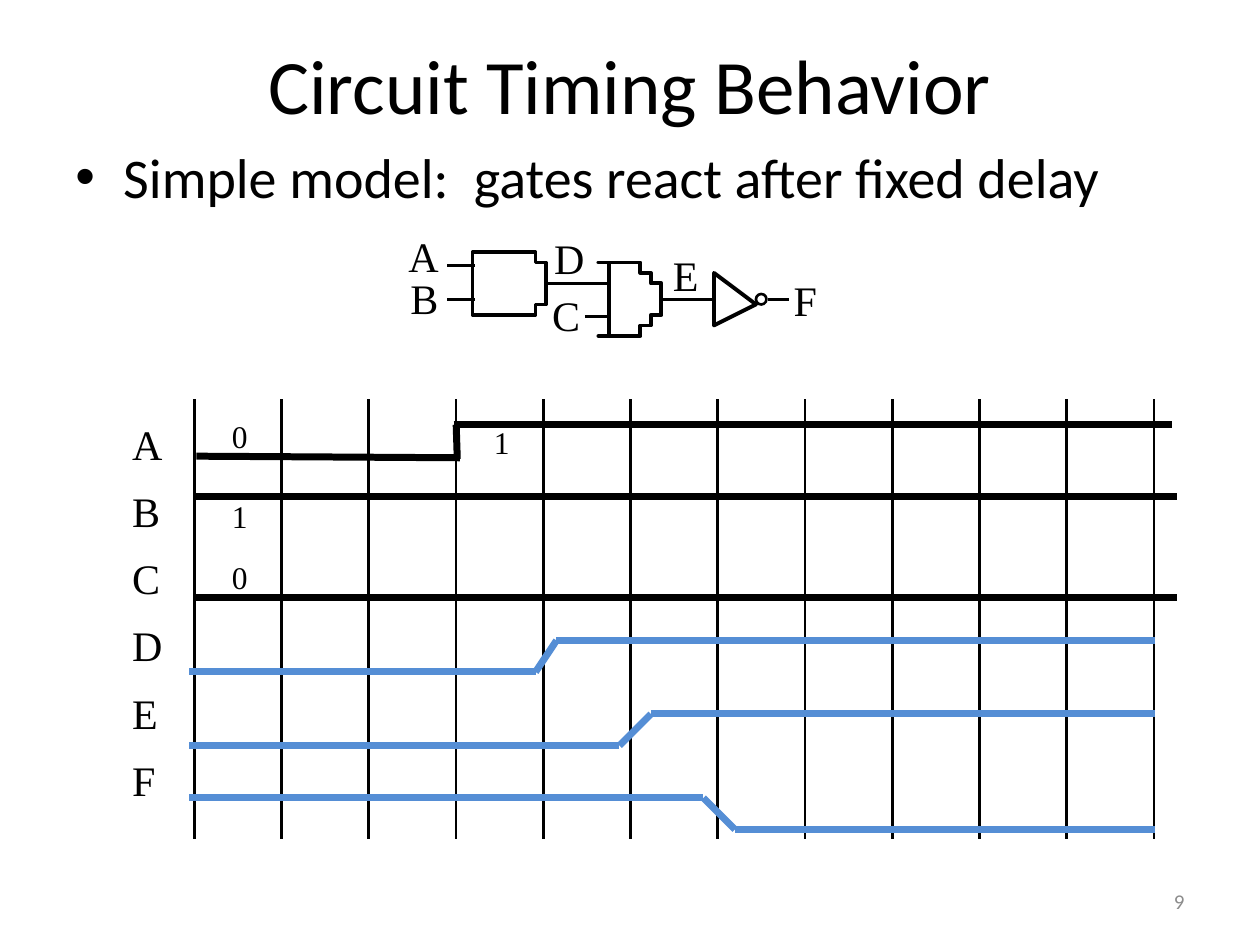
"""Build a slide that shows a small logic circuit and its timing diagram."""
from dataclasses import dataclass
from itertools import pairwise
from math import cos, pi, sin

from lxml import etree
from pptx import Presentation
from pptx.dml.color import RGBColor
from pptx.enum.shapes import MSO_CONNECTOR, MSO_SHAPE
from pptx.enum.text import MSO_ANCHOR, PP_ALIGN
from pptx.oxml.ns import qn
from pptx.util import Inches, Pt

COLORS = {"ink": "000000", "wave": "558ED5", "number": "8C8C8C"}
SANS, SERIF = "Calibri", "Times New Roman"
STRAIGHT, ELLIPSE = MSO_CONNECTOR.STRAIGHT, MSO_SHAPE.OVAL
LEFT, CENTER, RIGHT = PP_ALIGN.LEFT, PP_ALIGN.CENTER, PP_ALIGN.RIGHT
TOP, MIDDLE, BOTTOM = MSO_ANCHOR.TOP, MSO_ANCHOR.MIDDLE, MSO_ANCHOR.BOTTOM
COLUMNS, ROWS = 120, 90
CELL = Inches(10) // COLUMNS
Point = tuple[float, float]


@dataclass
class Label:
    text: str
    left: float
    top: float
    width: float
    height: float
    size: float = 24
    font: str = SERIF
    color: str = "ink"
    align: PP_ALIGN = LEFT
    anchor: MSO_ANCHOR = TOP
    wrap: bool = False
    spacing: float = 0


@dataclass
class Stroke:
    points: list[Point]
    color: str = "ink"
    weight: float = 4


def grid(value: float) -> int:
    return round(value * CELL)


def paint_line(line, color: str, weight: float) -> None:
    line.color.rgb = RGBColor.from_string(COLORS[color])
    line.width = Pt(weight)


def draw_label(page, label: Label):
    box = page.shapes.add_textbox(
        *map(grid, (label.left, label.top, label.width, label.height)))
    frame = box.text_frame
    frame.text = label.text
    frame.word_wrap = label.wrap
    frame.vertical_anchor = label.anchor
    for para in frame.paragraphs:
        para.alignment = label.align
        para.space_before = para.space_after = Pt(label.spacing)
        for span in para.runs:
            span.font.size = Pt(label.size)
            span.font.name = label.font
            span.font.color.rgb = RGBColor.from_string(COLORS[label.color])
    return box


def add_bullet(para) -> None:
    properties = para._p.get_or_add_pPr()
    properties.set("marL", str(Inches(0.38)))
    properties.set("indent", str(-Inches(0.38)))
    etree.SubElement(properties, qn("a:buFont")).set("typeface", "Arial")
    etree.SubElement(properties, qn("a:buChar")).set("char", "•")


def draw_stroke(page, stroke: Stroke) -> None:
    for start, end in pairwise(stroke.points):
        line = page.shapes.add_connector(STRAIGHT, *map(grid, (*start, *end)))
        paint_line(line.line, stroke.color, stroke.weight)
        etree.SubElement(line._element.spPr, qn("a:effectLst"))


def draw_outline(page, points: list[Point], weight: float) -> None:
    builder = page.shapes.build_freeform(*points[0], scale=CELL)
    builder.add_line_segments(points[1:], close=True)
    finish_part(builder.convert_to_shape(), weight)


def finish_part(part, weight: float) -> None:
    part.shadow.inherit = False
    part.fill.background()
    paint_line(part.line, "ink", weight)


def half_ellipse(x: float, y: float, across: float, down: float) -> list[Point]:
    angles = [pi * step / 32 - pi / 2 for step in range(33)]
    return [(x + across * cos(angle), y + down * sin(angle)) for angle in angles]


def draw_circuit(page) -> None:
    draw_outline(page, [(45.2, 23.65), *half_ellipse(49.2, 26.9, 2.8, 3.25),
                        (45.2, 30.15)], 2)
    draw_outline(page, [*half_ellipse(58.9, 28.6, 4.25, 3.4),
                        *reversed(half_ellipse(57, 28.6, 1.4, 3.4))], 2.25)
    draw_outline(page, [(71.85, 28.6), (67.8, 25.9), (67.8, 31.25)], 2.25)
    bubble = page.shapes.add_shape(ELLIPSE, *map(grid, (72, 28, 1, 1)))
    finish_part(bubble, 1.5)
    for start, end, row in WIRES:
        draw_stroke(page, Stroke([(start, row), (end, row)], weight=1.5))


WIRES = [
    (42.6, 45.2, 25.3), (42.6, 45.2, 28.55), (51.9, 58.1, 27),
    (55.7, 58.1, 30.15), (63.1, 67.8, 28.55), (73.1, 75.1, 28.5),
]
TITLE = Label("Circuit Timing Behavior", 6, -2, 108, 15, 44, SANS,
              align=CENTER, anchor=BOTTOM, wrap=True)
BODY = Label("Simple model:  gates react after fixed delay", 6, 13, 108, 67.4,
             32, SANS, wrap=True, spacing=6.4)
LABELS = [
    TITLE,
    Label("9", 86, 83.4, 28, 4.8, 12, SANS, "number", RIGHT, MIDDLE, True),
    Label("A\nB\nC\nD\nE\nF", 11.4, 39.25, 5.3, 40.4, spacing=4.8),
    *(Label(text, left, top, 3.8, 4.8, 18) for text, left, top in [
        ("0", 20.9, 39.1), ("1", 20.9, 46.7), ("0", 20.9, 52.6), ("1", 45.85, 39.7)]),
    *(Label(text, left, top, 5.2, 6) for text, left, top in [
        ("A", 37.7, 21.4), ("B", 37.9, 25.4), ("C", 51.4, 27),
        ("D", 51.6, 21.6), ("E", 62.9, 23.2), ("F", 74.4, 25.6)]),
]
INPUTS = [
    Stroke([(18.7, 43.45), (43.8, 43.6)]),
    Stroke([(43.45, 40.45), (43.55, 43.7)]),
    Stroke([(43.2, 40.45), (111.6, 40.45)]),
    Stroke([(18.4, 47.3), (112.1, 47.3)]),
    Stroke([(18.4, 56.9), (112.1, 56.9)]),
]
OUTPUTS = [
    Stroke([(18, 64), (51, 64), (53, 61), (110, 61)], "wave"),
    Stroke([(18, 71), (59, 71), (62, 68), (110, 68)], "wave"),
    Stroke([(18, 76), (67, 76), (70, 79), (110, 79)], "wave"),
]
TICKS = [
    Stroke([(18.5 + 8.31 * tick, 38.05), (18.5 + 8.31 * tick, 79.9)], weight=1.5)
    for tick in range(12)
]


def main() -> None:
    deck = Presentation()
    deck.slide_width, deck.slide_height = CELL * COLUMNS, CELL * ROWS
    page = deck.slides.add_slide(deck.slide_layouts[6])
    for label in LABELS:
        draw_label(page, label)
    add_bullet(draw_label(page, BODY).text_frame.paragraphs[0])
    draw_circuit(page)
    for stroke in INPUTS + TICKS + OUTPUTS:
        draw_stroke(page, stroke)
    deck.save("out.pptx")


if __name__ == "__main__":
    main()
